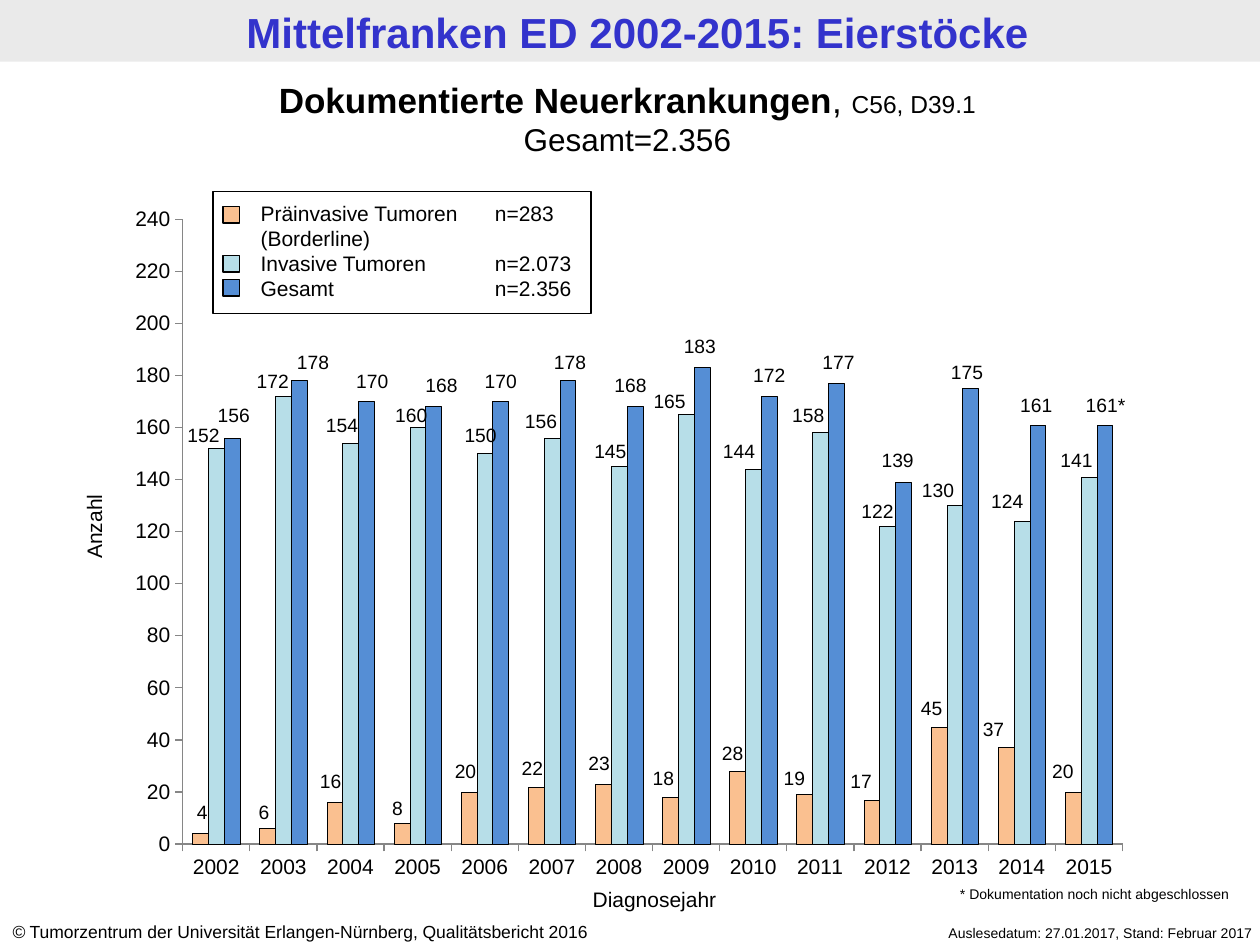
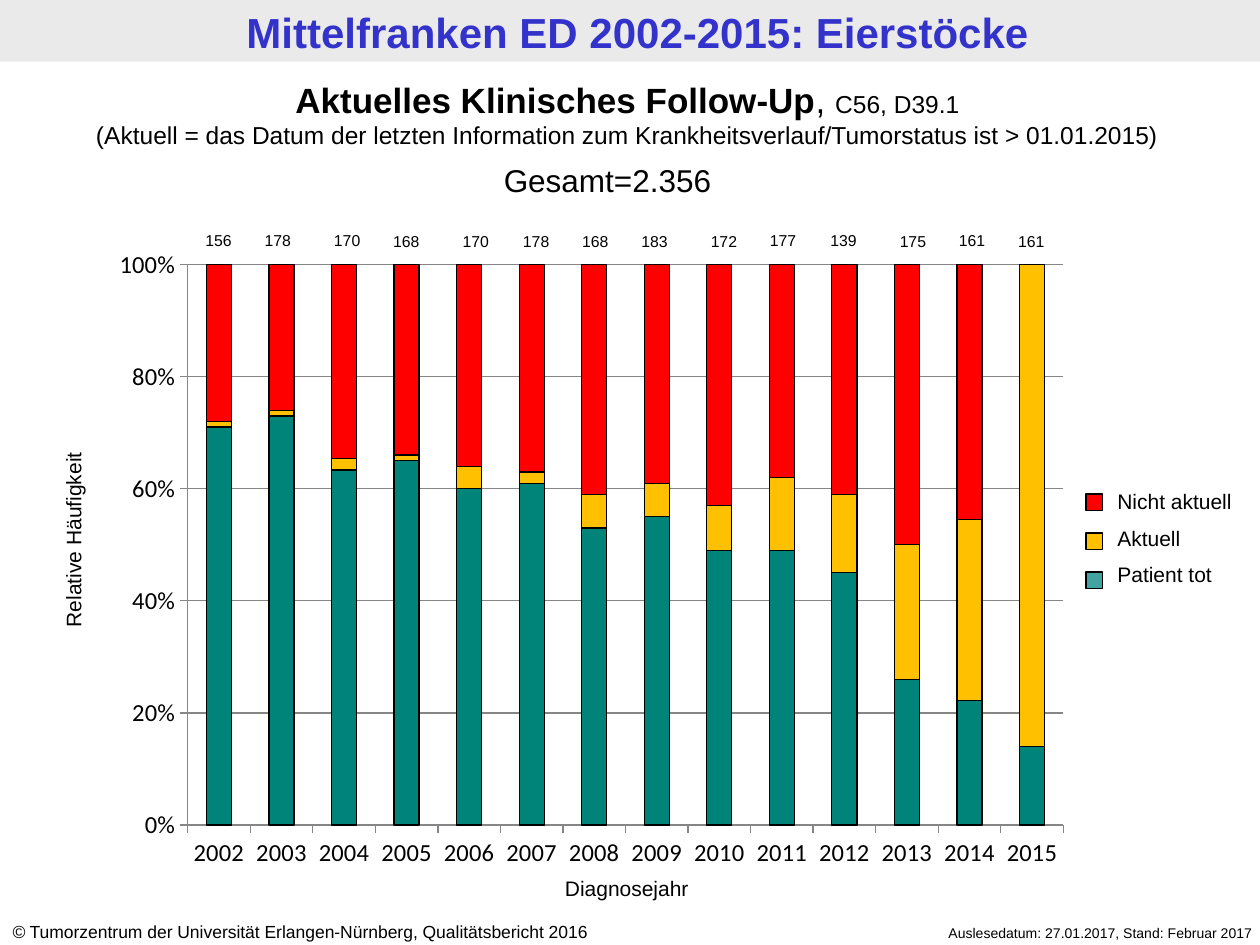
from lxml import etree
from pptx import Presentation, util as u
from pptx.chart.data import CategoryChartData
from pptx.dml.color import RGBColor
from pptx.enum import chart as ch, shapes as sh, text as tx
from pptx.oxml import parse_xml
from pptx.oxml.ns import nsdecls, qn

INK, BLUE, BAND, GREY = "000000", "3333CC", "EAEAEA", "868686"
PEACH, AQUA, SKY = "FAC090", "B7DEE8", "558ED5"
TEAL, GOLD, RED, PALE = "008378", "FFC000", "FF0000", "008380"
MID, LEFT, RIGHT = tx.PP_ALIGN.CENTER, tx.PP_ALIGN.LEFT, tx.PP_ALIGN.RIGHT
YEARS = [str(year) for year in range(2002, 2016)]

EARLY = [4, 6, 16, 8, 20, 22, 23, 18, 28, 19, 17, 45, 37, 20]
GROWN = [152, 172, 154, 160, 150, 156, 145, 165, 144, 158, 122, 130, 124, 141]
TOTAL = [156, 178, 170, 168, 170, 178, 168, 183, 172, 177, 139, 175, 161, 161]
DEAD = [71, 73, 64, 65, 60, 61, 53, 55, 49, 49, 45, 26, 22, 14]
FRESH = [1, 1, 2, 1, 4, 2, 6, 6, 8, 13, 14, 24, 32, 86]
STALE = [28, 26, 35, 34, 36, 37, 41, 39, 43, 38, 41, 50, 45, None]

EARLY_AT = [(1.34, 6.3), (1.83, 6.3), (2.36, 6.06), (2.89, 6.27), (3.43, 5.98),
            (3.96, 5.95), (4.49, 5.91), (5, 6.03), (5.55, 5.83), (6.04, 6.03),
            (6.57, 6.06), (7.13, 5.48), (7.62, 5.64), (8.17, 5.98)]
GROWN_AT = [(1.3, 3.31), (1.85, 2.88), (2.4, 3.23), (2.95, 3.15), (3.5, 3.31),
            (3.98, 3.2), (4.53, 3.44), (5, 3.04), (5.55, 3.44), (6.1, 3.15),
            (6.65, 3.91), (7.13, 3.75), (7.68, 3.83), (8.23, 3.51)]
TOTAL_AT = [(1.54, 3.15), (2.17, 2.73), (2.64, 2.88), (3.19, 2.91), (3.66, 2.88),
            (4.21, 2.73), (4.69, 2.91), (5.24, 2.6), (5.79, 2.83), (6.34, 2.73),
            (6.81, 3.51), (7.36, 2.81), (7.91, 3.07), (8.46, 3.07)]
TOP_AT = [(1.46, 1.78), (1.93, 1.78), (2.48, 1.78), (2.95, 1.79), (3.5, 1.79),
          (3.98, 1.79), (4.45, 1.79), (4.92, 1.79), (5.47, 1.79), (5.94, 1.78),
          (6.42, 1.78), (6.97, 1.79), (7.44, 1.78), (7.91, 1.79)]


def rgb(code):
    """Turn a hex string into a colour."""
    return RGBColor.from_string(code)


def place(box):
    """Turn left, top, width and height in inches into lengths."""
    return [u.Inches(side) for side in box]


def write(slide, box, lines, align=LEFT, color=INK, turn=0, gap=0, tab=None):
    """Add a text box; each line is a list of (text, size, style) runs."""
    shape = slide.shapes.add_textbox(*place(box))
    shape.rotation = turn
    frame = shape.text_frame
    frame.word_wrap = True
    for num, line in enumerate(lines):
        para = frame.paragraphs[0] if num == 0 else frame.add_paragraph()
        para.alignment = align
        if num and gap:
            para.space_before = u.Pt(gap)
        if tab:
            stops = etree.SubElement(para._p.get_or_add_pPr(), qn("a:tabLst"))
            etree.SubElement(stops, qn("a:tab"), pos=str(u.Inches(tab)), algn="l")
        for words, size, style in line:
            run = para.add_run()
            run.text = words
            font = run.font
            font.name, font.size = "Arial", u.Pt(size)
            font.bold, font.italic = style == "b", style == "i"
            font.color.rgb = rgb(color)


def block(slide, box, fill=None, line=INK, alpha=None):
    """Add a rectangle with an optional fill, outline and opacity."""
    shape = slide.shapes.add_shape(sh.MSO_SHAPE.RECTANGLE, *place(box))
    shape.shadow.inherit = False
    if fill:
        shape.fill.solid()
        shape.fill.fore_color.rgb = rgb(fill)
    else:
        shape.fill.background()
    if alpha:
        tint = shape._element.spPr.find(".//" + qn("a:srgbClr"))
        etree.SubElement(tint, qn("a:alpha"), val=str(alpha * 1000))
    if line:
        shape.line.color.rgb = rgb(line)
        shape.line.width = u.Pt(0.75)
    else:
        shape.line.fill.background()


def swatch(slide, left, top, fill, alpha=None):
    """Add a legend key."""
    block(slide, (left, top, 0.13, 0.13), fill, alpha=alpha)


def label(slide, values, spots, width, size):
    """Write each value at its spot."""
    for value, (left, top) in zip(values, spots):
        write(slide, (left, top, width, 0.29), [[(str(value), size, "")]], MID)


def fix(chart, box, plot):
    """Pin the inner plot area, given in slide inches, within the chart."""
    parts = {"x": (plot[0] - box[0]) / box[2], "y": (plot[1] - box[1]) / box[3],
             "w": plot[2] / box[2], "h": plot[3] / box[3]}
    modes = "".join(f'<c:{key}Mode val="edge"/>' for key in "xy")
    sizes = "".join(f'<c:{key} val="{part:.4f}"/>' for key, part in parts.items())
    area = chart._chartSpace.find(".//" + qn("c:plotArea"))
    for old in area.findall(qn("c:layout")):
        area.remove(old)
    area.insert(0, parse_xml(
        f'<c:layout {nsdecls("c")}><c:manualLayout><c:layoutTarget val="inner"/>'
        f'{modes}{sizes}</c:manualLayout></c:layout>'))


def graph(slide, kind, box, plot, rows, face, size, gap, lap, width, top, step):
    """Add a column chart; each row is (name, values, colour)."""
    data = CategoryChartData()
    data.categories = YEARS
    for name, values, _ in rows:
        data.add_series(name, values)
    chart = slide.shapes.add_chart(kind, *place(box), data).chart
    chart.has_legend = chart.has_title = False
    chart.font.name, chart.font.size = face, u.Pt(size)
    chart.font.color.rgb = rgb(INK)
    bars = chart.plots[0]
    bars.gap_width, bars.overlap, bars.vary_by_categories = gap, lap, False
    for series, (_, _, color) in zip(bars.series, rows):
        series.format.fill.solid()
        series.format.fill.fore_color.rgb = rgb(color)
        series.format.line.color.rgb = rgb(INK)
        series.format.line.width = u.Pt(width)
    for axis in (chart.category_axis, chart.value_axis):
        axis.has_major_gridlines = False
        axis.major_tick_mark = ch.XL_TICK_MARK.OUTSIDE
        axis.minor_tick_mark = ch.XL_TICK_MARK.NONE
        axis.format.line.color.rgb = rgb(GREY)
    scale = chart.value_axis
    scale.minimum_scale, scale.maximum_scale, scale.major_unit = 0, top, step
    fix(chart, box, plot)
    return chart


def frame(deck):
    """Add a slide with the shared title band and footers."""
    slide = deck.slides.add_slide(deck.slide_layouts[6])
    block(slide, (0, 0, 10, 0.49), BAND, None)
    write(slide, (0.06, 0, 10, 0.49),
          [[("Mittelfranken ED 2002-2015: Eierstöcke", 24, "b")]], MID, BLUE)
    write(slide, (0, 7.26, 5.24, 0.24), [[("©", 10, "i"), (
        " Tumorzentrum der Universität Erlangen-Nürnberg, Qualitätsbericht 2016",
        10, "")]])
    write(slide, (6.65, 7.29, 3.39, 0.21),
          [[("Auslesedatum: 27.01.2017, Stand: Februar 2017", 8, "")]], RIGHT)
    return slide


def head(slide, name, note, size):
    """Add the two-line heading above a chart."""
    write(slide, (0, 0.57, 9.96, 0.74),
          [[(name, 20, "b"), (", ", 20, ""), ("C56, D39.1", 14, "")],
           [(note, size, "")]], MID)


def cases(deck):
    """Build the slide of documented new cases."""
    slide = frame(deck)
    graph(slide, ch.XL_CHART_TYPE.COLUMN_CLUSTERED, (0.91, 1.55, 8.16, 5.55),
          (1.45, 1.74, 7.46, 4.96),
          [("Präinvasive Tumoren", EARLY, PEACH), ("Invasive Tumoren", GROWN, AQUA),
           ("Gesamt", TOTAL, SKY)], "Arial", 12, 124, 0, 0.25, 240, 20)
    head(slide, "Dokumentierte Neuerkrankungen", "Gesamt=2.356", 18)
    write(slide, (3.66, 6.99, 3.07, 0.3), [[("Diagnosejahr", 12, "")]], MID)
    write(slide, (-0.56, 4.03, 2.61, 0.3), [[("Anzahl", 12, "")]], MID, turn=270)
    block(slide, (1.69, 1.52, 3, 0.97))
    keys = ["Präinvasive Tumoren\tn=283", "(Borderline)",
            "Invasive Tumoren\tn=2.073", "Gesamt\tn=2.356"]
    write(slide, (1.97, 1.54, 2.73, 0.91), [[(key, 12, "")] for key in keys], tab=1.86)
    for top, fill in ((1.64, PEACH), (2.03, AQUA), (2.22, SKY)):
        swatch(slide, 1.77, top, fill)
    label(slide, EARLY, EARLY_AT, 0.53, 11)
    label(slide, GROWN, GROWN_AT, 0.63, 11)
    label(slide, TOTAL[:-1] + [f"{TOTAL[-1]}*"], TOTAL_AT, 0.63, 11)
    write(slide, (7.52, 6.98, 2.48, 0.24),
          [[("* Dokumentation noch nicht abgeschlossen", 8, "")]])


def follow(deck):
    """Build the slide of clinical follow-up."""
    slide = frame(deck)
    chart = graph(slide, ch.XL_CHART_TYPE.COLUMN_STACKED_100, (0.79, 1.87, 7.8, 5.11),
                  (1.49, 2.1, 6.95, 4.45),
                  [("Patient tot", DEAD, TEAL), ("Aktuell", FRESH, GOLD),
                   ("Nicht aktuell", STALE, RED)],
                  "Calibri", 14, 150, 100, 0.75, 1, 0.2)
    scale = chart.value_axis
    scale.has_major_gridlines = True
    scale.major_gridlines.format.line.color.rgb = rgb(GREY)
    scale.tick_labels.number_format = "0%"
    scale.tick_labels.number_format_is_linked = False
    head(slide, "Aktuelles Klinisches Follow-Up",
         "(Aktuell = das Datum der letzten Information zum "
         "Krankheitsverlauf/Tumorstatus ist > 01.01.2015)", 14)
    write(slide, (3.9, 1.23, 2.2, 0.4), [[("Gesamt=2.356", 18, "")]])
    write(slide, (3.85, 6.9, 2.25, 0.31), [[("Diagnosejahr", 12, "")]], MID)
    write(slide, (-0.62, 4.13, 2.41, 0.31), [[("Relative Häufigkeit", 12, "")]],
          MID, turn=270)
    keys = ["Nicht aktuell", "Aktuell", "Patient tot"]
    write(slide, (8.77, 3.83, 1.23, 0.91), [[(key, 12, "")] for key in keys], gap=6.5)
    for num, (fill, alpha) in enumerate(((RED, None), (GOLD, None), (PALE, 74))):
        swatch(slide, 8.62, 3.92 + 0.31 * num, fill, alpha)
    label(slide, TOTAL, TOP_AT, 0.55, 9)


def main():
    """Build and save the deck."""
    deck = Presentation()
    deck.slide_width, deck.slide_height = u.Inches(10), u.Inches(7.5)
    cases(deck)
    follow(deck)
    deck.save("out.pptx")


if __name__ == "__main__":
    main()
